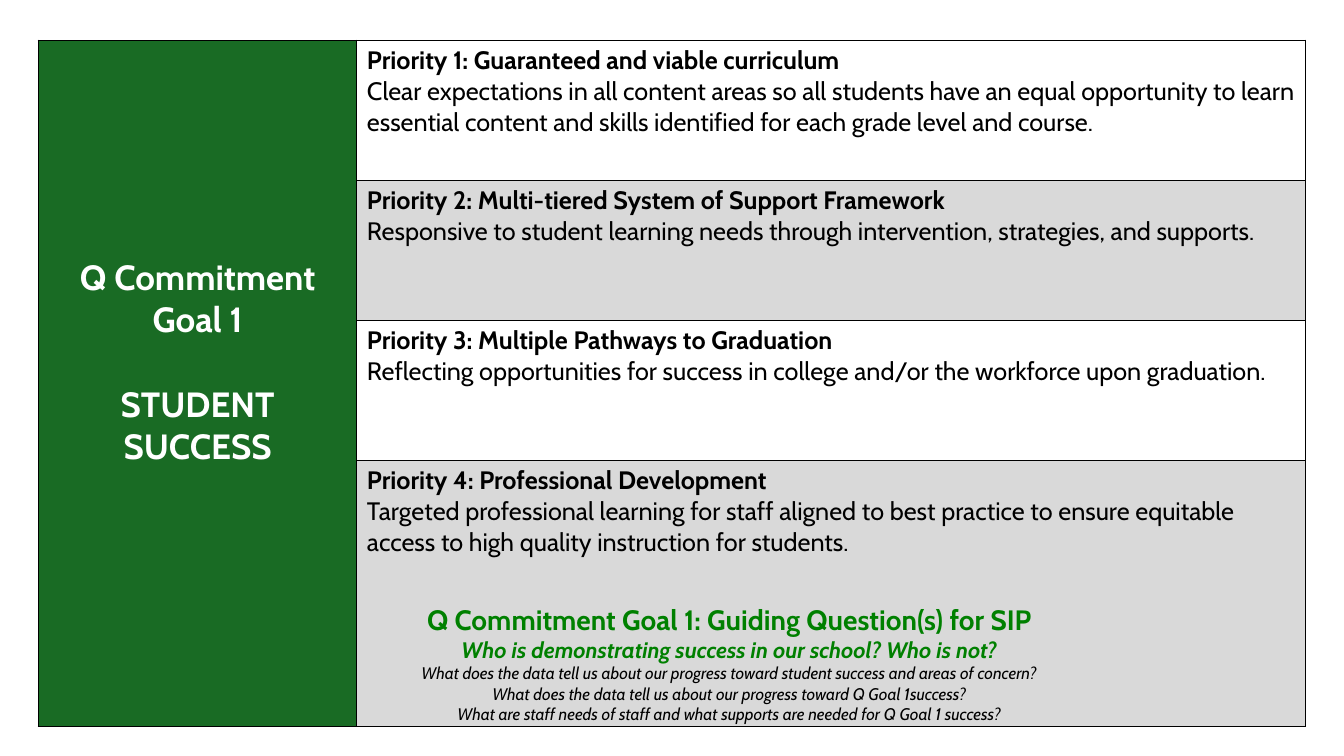
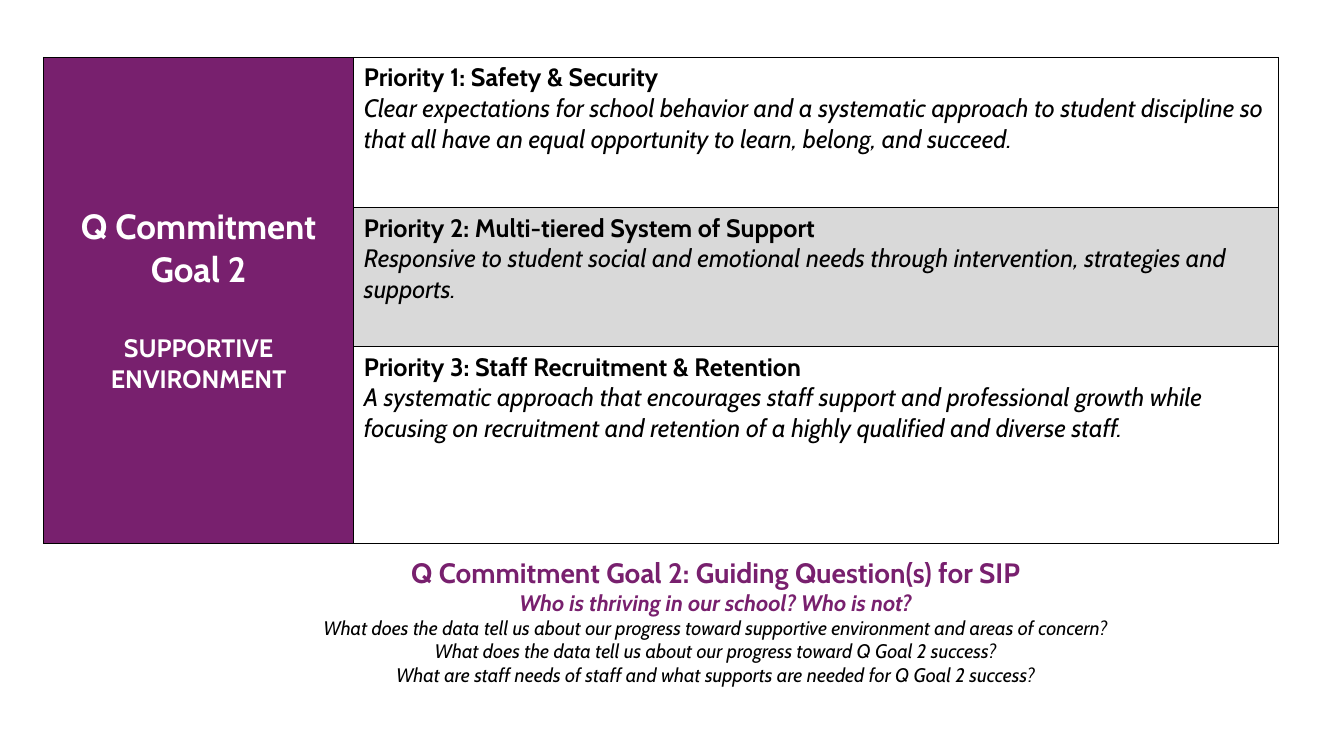
from lxml import etree
from pptx import Presentation
from pptx.dml.color import RGBColor
from pptx.enum.text import MSO_ANCHOR, PP_ALIGN
from pptx.oxml import parse_xml
from pptx.oxml.ns import nsdecls
from pptx.util import Inches, Pt

FONT = "Cabin"
BLACK = RGBColor(0x00, 0x00, 0x00)
WHITE = RGBColor(0xFF, 0xFF, 0xFF)
GRAY = RGBColor(0xD9, 0xD9, 0xD9)
FOREST = RGBColor(0x19, 0x6B, 0x24)
GREEN = RGBColor(0x00, 0x80, 0x00)
PURPLE = RGBColor(0x78, 0x20, 0x6E)
CENTER, LEFT = PP_ALIGN.CENTER, PP_ALIGN.LEFT
MIDDLE, TOP = MSO_ANCHOR.MIDDLE, MSO_ANCHOR.TOP
BLANK_LAYOUT = 6
SECTION_GAP = 30

# Content: goal lines are (text, size, points before)
GOALS = [
    {
        "band": FOREST, "accent": GREEN,
        "table_at": (0.38, 0.4), "cols": (3.16, 9.41),
        "rows": (1.39, 1.39, 1.39, 2.64), "goal_bottom": 0.47,
        "goal": [("Q Commitment Goal\u00a01", 25, 0),
                 ("STUDENT SUCCESS", 25, SECTION_GAP)],
        "body_italic": False,
        "priorities": [
            ("Priority 1: Guaranteed and viable curriculum",
             "Clear expectations in all content areas so all students have an equal "
             "opportunity to learn essential content and skills identified for each "
             "grade level and course."),
            ("Priority 2: Multi-tiered System of Support Framework",
             "Responsive to student learning needs through intervention, strategies, "
             "and supports."),
            ("Priority 3: Multiple Pathways to Graduation",
             "Reflecting opportunities for success in college and/or the workforce "
             "upon graduation."),
            ("Priority 4: Professional Development",
             "Targeted professional learning for staff aligned to best practice to "
             "ensure equitable access to high quality instruction for students."),
        ],
        "guide_at": (2.22, 5.93, 10.03, 1.3), "question_size": 12,
        "guide": ("Q Commitment Goal 1: Guiding Question(s) for SIP",
                  "Who is demonstrating success in our school? Who is not?"),
        "questions": [
            "What does the data tell us about our progress toward student success "
            "and areas of concern?",
            "What does the data tell us about our progress toward Q Goal 1success?",
            "What are staff needs of staff and what supports are needed for "
            "Q Goal 1 success?",
        ],
    },
    {
        "band": PURPLE, "accent": PURPLE,
        "table_at": (0.43, 0.57), "cols": (3.08, 9.17),
        "rows": (1.49, 1.38, 1.95), "goal_bottom": 0.05,
        "goal": [("Q Commitment", 25, 0), ("Goal 2", 25, 0),
                 ("SUPPORTIVE ENVIRONMENT", 18, SECTION_GAP)],
        "body_italic": True,
        "priorities": [
            ("Priority 1: Safety & Security",
             "Clear expectations for school behavior and a systematic approach to "
             "student discipline so that all have an equal opportunity to learn, "
             "belong, and succeed."),
            ("Priority 2: Multi-tiered System of Support",
             "Responsive to student social and emotional needs through intervention, "
             "strategies and supports."),
            ("Priority 3: Staff Recruitment & Retention",
             "A systematic approach that encourages staff support and professional "
             "growth while focusing on recruitment and retention of a highly "
             "qualified and diverse staff."),
        ],
        "guide_at": (1.65, 5.46, 10.9, 1.5), "question_size": 14,
        "guide": ("Q Commitment Goal 2: Guiding Question(s) for SIP",
                  "Who is thriving in our school? Who is not?"),
        "questions": [
            "What does the data tell us about our progress toward supportive "
            "environment and areas of concern?",
            "What does the data tell us about our progress toward Q Goal 2 success?",
            "What are staff needs of staff and what supports are needed for "
            "Q Goal 2 success?",
        ],
    },
]


def write(tf, lines, align):
    """Fill a text frame; each line is (text, font values, points before)."""
    for i, (text, values, before) in enumerate(lines):
        p = tf.paragraphs[0] if i == 0 else tf.add_paragraph()
        p.alignment = align
        p.space_before = Pt(before)
        r = p.add_run()
        r.text = text
        r.font.name = FONT
        r.font.color.rgb = values["color"]
        for name in ("size", "bold", "italic"):
            setattr(r.font, name, values[name])


def style(size, color=BLACK, bold=False, italic=False):
    return {"size": Pt(size), "color": color, "bold": bold, "italic": italic}


def format_cell(cell, fill, anchor):
    cell.fill.solid()
    cell.fill.fore_color.rgb = fill
    cell.vertical_anchor = anchor
    tcPr = cell._tc.get_or_add_tcPr()
    for i, side in enumerate(("lnL", "lnR", "lnT", "lnB")):
        ln = parse_xml(f'<a:{side} {nsdecls("a")} w="{Pt(1)}"/>')
        solid = etree.SubElement(ln, ln.tag.replace(side, "solidFill"))
        etree.SubElement(solid, ln.tag.replace(side, "srgbClr"), val=str(BLACK))
        tcPr.insert(i, ln)


def add_goal_table(s, goal):
    cols, rows = goal["cols"], goal["rows"]
    x, y = goal["table_at"]
    table = s.shapes.add_table(len(rows), len(cols), Inches(x), Inches(y),
                               Inches(sum(cols)), Inches(sum(rows))).table
    table.first_row = table.horz_banding = False
    for col, width in zip(table.columns, cols):
        col.width = Inches(width)

    # Priorities, on alternating fills
    for i, (head, body) in enumerate(goal["priorities"]):
        table.rows[i].height = Inches(rows[i])
        format_cell(table.cell(i, 0), goal["band"], MIDDLE)
        cell = table.cell(i, 1)
        format_cell(cell, GRAY if i % 2 else WHITE, TOP)
        write(cell.text_frame, [(head, style(18, bold=True), 0),
                                (body, style(18, italic=goal["body_italic"]), 0)], LEFT)

    # Goal name down the left side
    band = table.cell(0, 0)
    band.merge(table.cell(len(rows) - 1, 0))
    band.margin_bottom = Inches(goal["goal_bottom"])
    write(band.text_frame, [(text, style(size, WHITE, bold=True), before)
                            for text, size, before in goal["goal"]], CENTER)


def add_guide(s, goal):
    tf = s.shapes.add_textbox(*map(Inches, goal["guide_at"])).text_frame
    tf.word_wrap = True
    title, lead = goal["guide"]
    lines = [(title, style(20, goal["accent"], bold=True), 0),
             (lead, style(16, goal["accent"], bold=True, italic=True), 0)]
    lines += [(q, style(goal["question_size"], italic=True), 0)
              for q in goal["questions"]]
    write(tf, lines, CENTER)


def main():
    prs = Presentation()
    prs.slide_width, prs.slide_height = Inches(13.33), Inches(7.5)
    for goal in GOALS:
        s = prs.slides.add_slide(prs.slide_layouts[BLANK_LAYOUT])
        add_goal_table(s, goal)
        add_guide(s, goal)
    prs.save("out.pptx")


if __name__ == "__main__":
    main()
